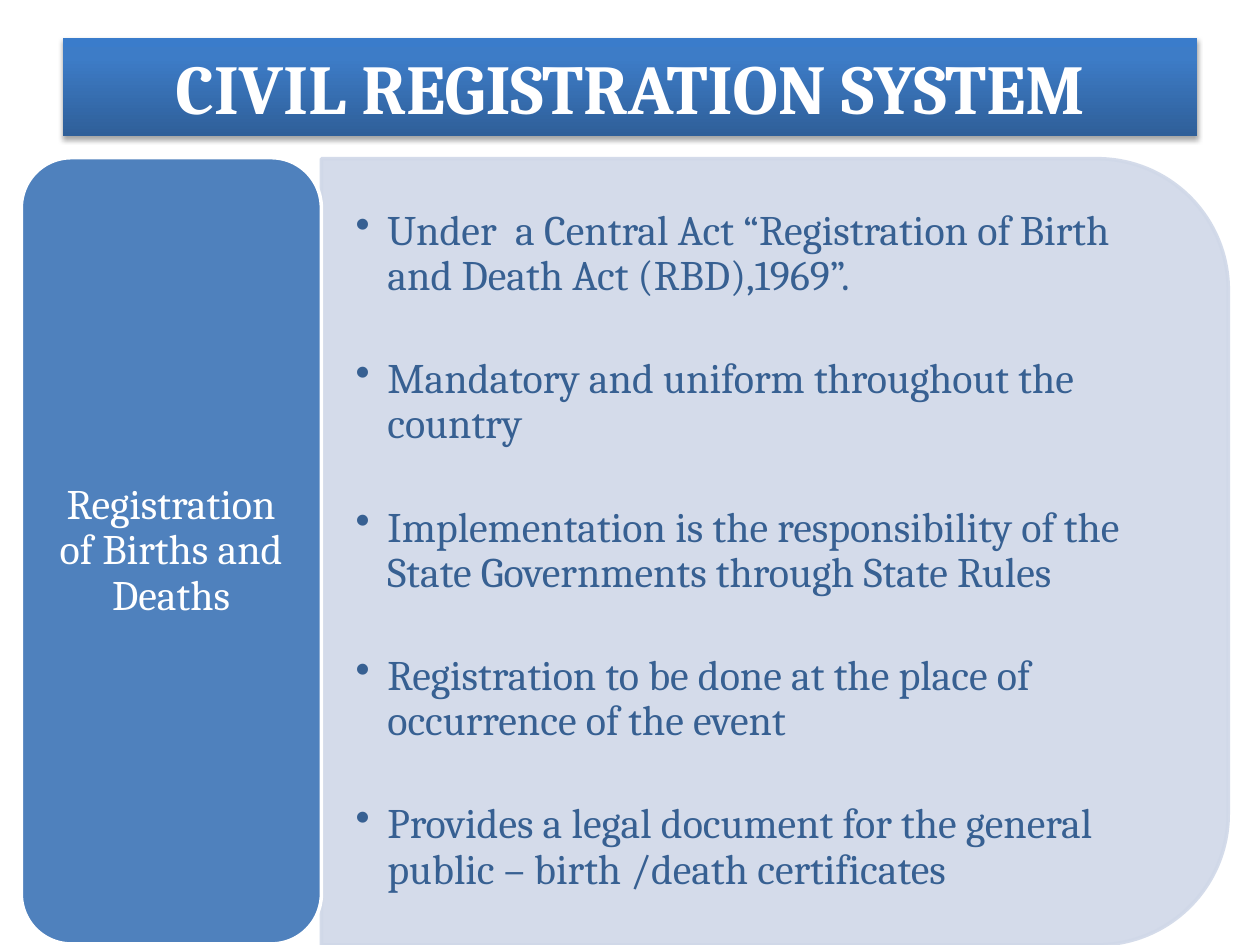
from pptx import Presentation as Deck
from pptx.dml.color import RGBColor as Rgb
from pptx.enum.shapes import MSO_SHAPE as Kind
from pptx.enum.text import MSO_ANCHOR as Anchor, PP_ALIGN as Align
from pptx.oxml import parse_xml as make
from pptx.oxml.ns import nsdecls, qn
from pptx.util import Cm, Pt

# Content
TITLE = "CIVIL REGISTRATION SYSTEM"
TOPIC = "Registration of Births and Deaths"
POINTS = [
    "Under  a Central Act “Registration of Birth and Death Act (RBD),1969”.",
    "Mandatory and uniform throughout the country",
    "Implementation is the responsibility of the State Governments through State Rules",
    "Registration to be done at the place of occurrence of the event",
    "Provides a legal document for the general public – birth /death certificates",
]

THEME = dict(
    font="Cambria", head=40, body=24,
    white="FFFFFF", blue="4F81BD", pale="D0D8E8", ink="376092",
    fade=[(0, "2F5F99"), (80, "3D7CC7"), (100, "3A7CCB")],
)

# Places in cm: left, top, width, height
WIDE, HIGH = 25.4, 19.05
BAR = (1.27, 0.76, 22.86, 1.98)
TAB = (0.43, 3.18, 6.05, 15.85)
PANEL = (6.48, 3.2, 18.28, 15.85)
LIST = (6.48, 3.96, 17.53, 14.3)
LABEL = (0.72, 3.48, 5.46, 15.27)
DENT, GAP = 0.64, 33
PAD = dict(margin_left=Cm(0.69), margin_right=Cm(0.69),
           margin_top=Cm(0.36), margin_bottom=Cm(0.36))


def turn(box):
    """Unrotated frame of a box that is drawn a quarter turn round."""
    x, y, w, h = box
    return x + (w - h) / 2, y + (h - w) / 2, h, w


def draw(kind, box, fill, edge=None):
    shape = slide.shapes.add_shape(kind, *map(Cm, box))
    shape.shadow.inherit = False
    shape.fill.solid()
    shape.fill.fore_color.rgb = Rgb.from_string(fill)
    if edge:
        shape.line.color.rgb = Rgb.from_string(edge)
        shape.line.width = Pt(2)
    else:
        shape.line.fill.background()
    return shape


def write(shape, lines, size, color, para, bold=False, pad=None):
    frame = shape.text_frame
    form = dict(word_wrap=True, vertical_anchor=Anchor.MIDDLE, **(pad or {}))
    for key, val in form.items():
        setattr(frame, key, val)
    frame.text = "\n".join(lines)
    for item in frame.paragraphs:
        for key, val in para.items():
            setattr(item, key, val)
        font = item.runs[0].font
        look = dict(name=THEME["font"], size=Pt(size), bold=bold)
        for key, val in look.items():
            setattr(font, key, val)
        font.color.rgb = Rgb.from_string(color)
    return frame.paragraphs


def text(box, *args, **more):
    return write(slide.shapes.add_textbox(*map(Cm, box)), *args, **more)


deck = Deck()
deck.slide_width, deck.slide_height = Cm(WIDE), Cm(HIGH)
slide = deck.slides.add_slide(deck.slide_layouts[6])

# Pale panel, slightly see-through
panel = draw(Kind.ROUND_2_SAME_RECTANGLE, turn(PANEL), THEME["pale"], THEME["pale"])
panel.rotation = 90
for tint in panel._element.spPr.iter(qn("a:srgbClr")):
    tint.append(make(f'<a:alpha {nsdecls("a")} val="90000"/>'))

# Bulleted points
rows = text(LIST, POINTS, THEME["body"], THEME["ink"],
            dict(line_spacing=0.9, space_after=Pt(GAP)), pad=PAD)
rows[-1].space_after = Pt(0)
for row in rows:
    prop = row._p.get_or_add_pPr()
    prop.set("marL", str(Cm(DENT)))
    prop.set("indent", str(-Cm(DENT)))
    prop.append(make(f'<a:buChar {nsdecls("a")} char="•"/>'))

# Topic tab
draw(Kind.ROUNDED_RECTANGLE, TAB, THEME["blue"], THEME["white"])
text(LABEL, [TOPIC], THEME["body"], THEME["white"],
     dict(line_spacing=0.9, alignment=Align.CENTER))

# Title bar with gradient and soft shadow
bar = draw(Kind.RECTANGLE, BAR, THEME["blue"])
write(bar, [TITLE], THEME["head"], THEME["white"],
      dict(alignment=Align.CENTER), bold=True)
stops = "".join(f'<a:gs pos="{pos * 1000}"><a:srgbClr val="{tint}"/></a:gs>'
                for pos, tint in THEME["fade"])
prop = bar._element.spPr
prop.replace(prop.find(qn("a:solidFill")), make(
    f'<a:gradFill {nsdecls("a")} rotWithShape="1"><a:gsLst>{stops}</a:gsLst>'
    '<a:lin ang="16200000" scaled="0"/></a:gradFill>'))
prop.find(qn("a:effectLst")).append(make(
    f'<a:outerShdw {nsdecls("a")} blurRad="{Pt(3.1)}" dist="{Pt(1.8)}" dir="5400000" '
    'rotWithShape="0"><a:srgbClr val="000000"><a:alpha val="35000"/></a:srgbClr>'
    '</a:outerShdw>'))

deck.save("out.pptx")
